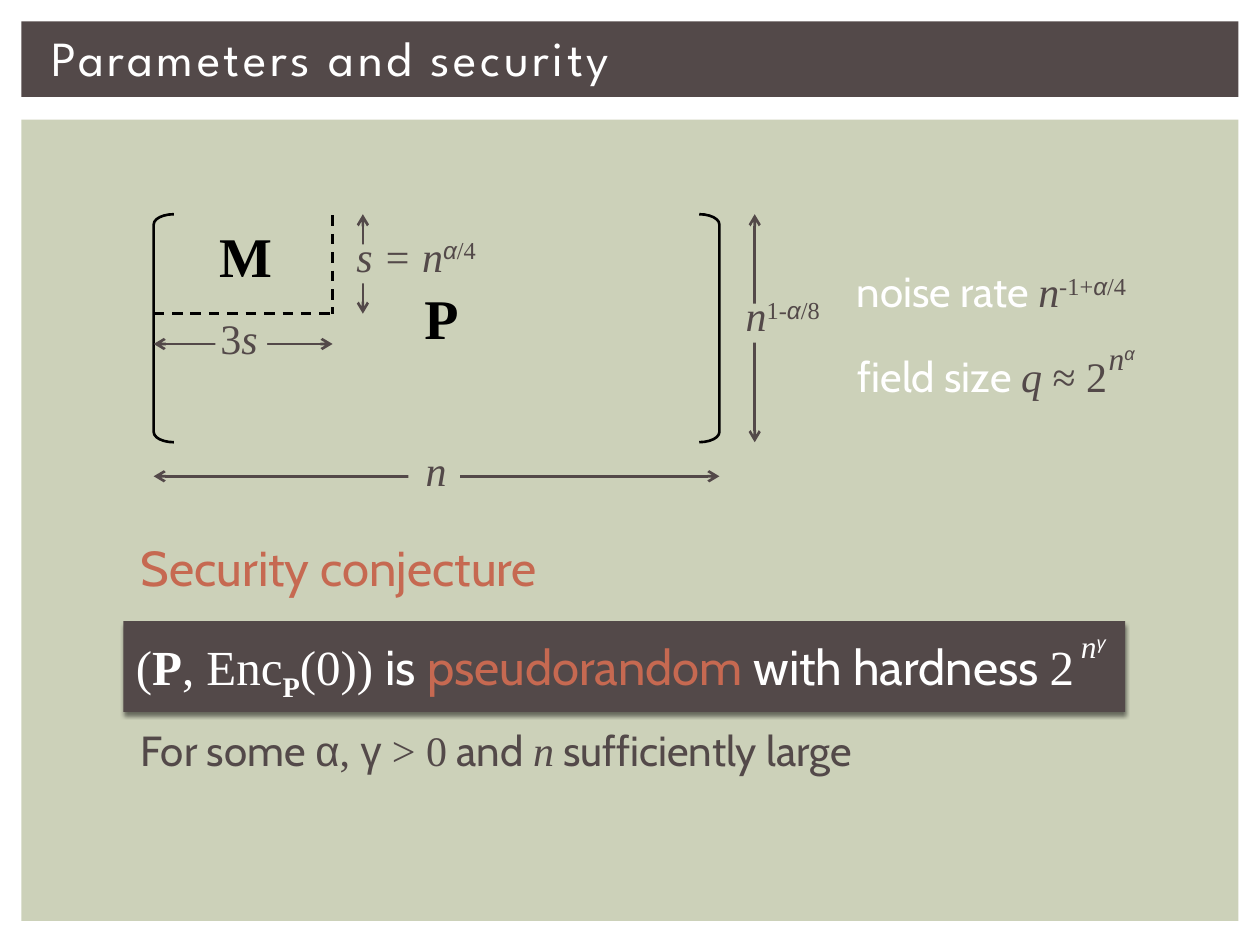
import pptx
import pptx.dml.color
import pptx.enum.dml
import pptx.enum.shapes
import pptx.enum.text
import pptx.oxml
import pptx.oxml.ns
import pptx.util

PX = 9144  # EMU in one px, 100 px to the inch
SHAPE = pptx.enum.shapes.MSO_SHAPE

BROWN = pptx.dml.color.RGBColor(0x53, 0x49, 0x49)
GREEN = pptx.dml.color.RGBColor(0xCC, 0xD1, 0xB9)
RED = pptx.dml.color.RGBColor(0xC6, 0x69, 0x51)
WHITE = pptx.dml.color.RGBColor(0xFF, 0xFF, 0xFF)
BLACK = pptx.dml.color.RGBColor(0, 0, 0)

SERIF, SANS, GREEK, TITLE = "Times New Roman", "Cabin", "Arial", "League Spartan"

# Runs are (text, font, style, colour if not the default);
# style letters: b bold, i italic, ^ superscript, _ subscript
TITLE_RUNS = [("Parameters and security", TITLE, "")]

# Matrix outline: left, top, right, bottom, and the corner of block M
LEFT, TOP, RIGHT, BOTTOM = 122, 170, 571, 351
BLOCK_RIGHT, BLOCK_BOTTOM = 264, 249
BRACKET_WIDTH = 16
MATRIX_NAMES = [("M", (164, 171, 61, 64)), ("P", (327, 220, 48, 64))]

# Dimensions: arrow ends, corner of the gap in the arrow, label box, label runs
GAP_SIZE = (41, 31)
DIMENSIONS = [
    ((LEFT, 273, BLOCK_RIGHT, 273), (171, 257), (165, 243, 52, 50),
     [("3", SERIF, ""), ("s", SERIF, "i")]),
    ((LEFT, 378, RIGHT, 378), (324, 362), (328, 348, 43, 50),
     [("n", SERIF, "i")]),
    ((288, TOP, 288, BLOCK_BOTTOM), (268, 194), (273, 178, 122, 50),
     [("s = n", SERIF, "i"), ("α", GREEK, "i^"), ("/4", SERIF, "^")]),
    ((599, TOP, 599, BOTTOM), (579, 241), (582, 225, 90, 50),
     [("n", SERIF, "i"), ("1-", SERIF, "^"), ("α", GREEK, "i^"), ("/8", SERIF, "^")]),
]

# Notes: box, size, runs
NOTES = [
    ((670, 206, 254, 50), 24,
     [("noise rate ", SANS, "", WHITE), ("n", SERIF, "i"), ("-", SERIF, "i^"),
      ("1+", SERIF, "^"), ("α", GREEK, "i^"), ("/4", SERIF, "^")]),
    ((671, 273, 222, 50), 24,
     [("field size ", SANS, "", WHITE), ("q ", SERIF, "i"), ("≈ 2", SERIF, "")]),
    ((870, 264, 44, 40), 18, [("n", SERIF, "i"), ("α", GREEK, "i^")]),
    ((102, 422, 351, 57), 28, [("Security conjecture", SANS, "", RED)]),
    ((102, 570, 607, 50), 24,
     [("For some ", SANS, ""), ("α", GREEK, ""), (", ", SERIF, ""), ("γ", GREEK, ""),
      (" > 0", SERIF, ""), (" and ", SANS, ""), ("n", SERIF, "i"),
      (" sufficiently large", SANS, "")]),
]

CONJECTURE_BOX = (98, 493, 795, 72)
CONJECTURE = [
    ((98, 500, 784, 57), 28,
     [("(", SERIF, ""), ("P", SERIF, "b"), (", Enc", SERIF, ""), ("P", SERIF, "b_"),
      ("(0)) ", SERIF, ""), ("is ", SANS, ""), ("pseudorandom", SANS, "", RED),
      (" with hardness ", SANS, ""), ("2", SERIF, "")]),
    ((848, 493, 44, 40), 18, [("n", SERIF, "i"), ("γ", GREEK, "i^")]),
]


def emu(lengths):
    return [length * PX for length in lengths]


def add_text(shapes, box, runs, size=24, colour=BROWN, wrap=False, spacing=0):
    text_box = shapes.add_textbox(*emu(box))
    frame = text_box.text_frame
    frame.word_wrap = wrap
    if wrap:
        frame.vertical_anchor = pptx.enum.text.MSO_ANCHOR.MIDDLE
    else:
        frame.auto_size = pptx.enum.text.MSO_AUTO_SIZE.SHAPE_TO_FIT_TEXT
    for text, font_name, style, *own_colour in runs:
        run = frame.paragraphs[0].add_run()
        run.text = text
        font = run.font
        font.name = font_name
        font.size = pptx.util.Pt(size)
        font.bold = "b" in style
        font.italic = "i" in style
        font.color.rgb = own_colour[0] if own_colour else colour
        properties = run._r.get_or_add_rPr()
        if "^" in style:
            properties.set("baseline", "30000")
        if "_" in style:
            properties.set("baseline", "-25000")
        if spacing:
            properties.set("spc", str(spacing * 100))


def add_box(shapes, box, fill):
    shape = shapes.add_shape(SHAPE.RECTANGLE, *emu(box))
    shape.shadow.inherit = False
    shape.fill.solid()
    shape.fill.fore_color.rgb = fill
    shape.line.fill.background()
    return shape


def add_bracket(shapes, kind, left):
    bracket = shapes.add_shape(kind, *emu((left, TOP, BRACKET_WIDTH, BOTTOM - TOP)))
    bracket.shadow.inherit = False
    bracket.adjustments[0] = 0.51
    bracket.fill.background()
    bracket.line.color.rgb = BLACK
    bracket.line.width = pptx.util.Pt(1.5)


def add_line(shapes, ends, colour, dashed=False, arrows=False):
    line = shapes.add_connector(pptx.enum.shapes.MSO_CONNECTOR.STRAIGHT, *emu(ends))
    line.line.color.rgb = colour
    line.line.width = pptx.util.Pt(1.5)
    if dashed:
        line.line.dash_style = pptx.enum.dml.MSO_LINE.DASH
    if arrows:
        for tag in ("a:headEnd", "a:tailEnd"):
            end = pptx.oxml.ns.qn(tag)
            line.line._get_or_add_ln().append(
                line._element.makeelement(end, {"type": "arrow"}))
    line._element.spPr.append(
        line._element.makeelement(pptx.oxml.ns.qn("a:effectLst"), {}))


def add_drop_shadow(shape):
    effects = shape._element.spPr.find(pptx.oxml.ns.qn("a:effectLst"))
    effects.append(pptx.oxml.parse_xml(
        f'<a:outerShdw {pptx.oxml.ns.nsdecls("a")} blurRad="31750" dist="25400" '
        'dir="5400000" rotWithShape="0"><a:srgbClr val="000000">'
        '<a:alpha val="50000"/></a:srgbClr></a:outerShdw>'))


def main():
    presentation = pptx.Presentation()
    presentation.slide_width, presentation.slide_height = emu((1000, 750))
    slide = presentation.slides.add_slide(presentation.slide_layouts[6])
    shapes = slide.shapes

    # Background panels and title
    add_box(shapes, (17, 95, 966, 636), GREEN)
    add_box(shapes, (17, 17, 966, 60), BROWN)
    add_text(shapes, (31, 16, 940, 59), TITLE_RUNS, size=28, colour=WHITE,
             wrap=True, spacing=2)

    # Matrix P with its block M
    add_bracket(shapes, SHAPE.LEFT_BRACKET, LEFT)
    add_bracket(shapes, SHAPE.RIGHT_BRACKET, RIGHT - BRACKET_WIDTH)
    add_line(shapes, (LEFT, BLOCK_BOTTOM, BLOCK_RIGHT, BLOCK_BOTTOM), BLACK, dashed=True)
    add_line(shapes, (BLOCK_RIGHT, TOP + 1, BLOCK_RIGHT, BLOCK_BOTTOM), BLACK, dashed=True)
    for name, box in MATRIX_NAMES:
        add_text(shapes, box, [(name, SERIF, "b")], size=32, colour=BLACK)

    # Dimension arrows, broken by their labels
    for ends, gap, box, runs in DIMENSIONS:
        add_line(shapes, ends, BROWN, arrows=True)
        add_box(shapes, gap + GAP_SIZE, GREEN)
        add_text(shapes, box, runs)

    for box, size, runs in NOTES:
        add_text(shapes, box, runs, size=size)

    # Conjecture banner
    banner = shapes.add_group_shape().shapes
    add_drop_shadow(add_box(banner, CONJECTURE_BOX, BROWN))
    for box, size, runs in CONJECTURE:
        add_text(banner, box, runs, size=size, colour=WHITE)

    presentation.save("out.pptx")


if __name__ == "__main__":
    main()
